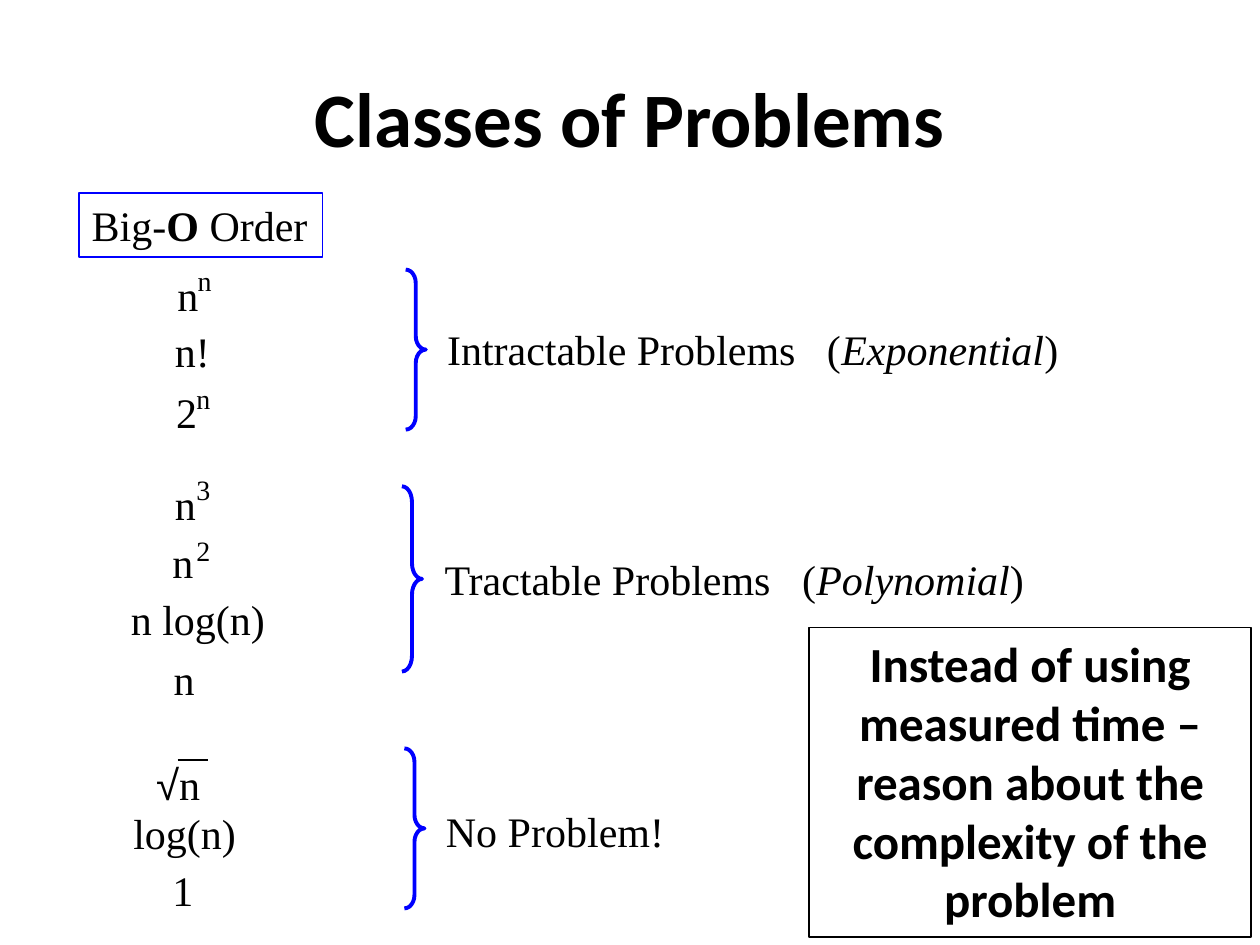
from pptx import Presentation
from pptx.dml.color import RGBColor
from pptx.enum.shapes import MSO_CONNECTOR, MSO_SHAPE
from pptx.enum.text import MSO_ANCHOR, MSO_AUTO_SIZE, PP_ALIGN
from pptx.oxml import parse_xml
from pptx.oxml.ns import nsdecls
from pptx.util import Inches, Pt

RECT, BRACE = MSO_SHAPE.RECTANGLE, MSO_SHAPE.RIGHT_BRACE
STRAIGHT = MSO_CONNECTOR.STRAIGHT
TOP, MID = MSO_ANCHOR.TOP, MSO_ANCHOR.MIDDLE
GROW, FIXED = MSO_AUTO_SIZE.SHAPE_TO_FIT_TEXT, MSO_AUTO_SIZE.NONE
LEFT, CENTER = PP_ALIGN.LEFT, PP_ALIGN.CENTER

COLORS = {"ink": "000000", "blue": "0000FF"}
BODY = {"name": "Times New Roman", "size": Pt(24)}
SMALL = {**BODY, "size": Pt(16)}
TITLE = {"name": "Calibri", "size": Pt(44), "bold": True}
NOTE = {**TITLE, "size": Pt(28)}
LABEL = {"word_wrap": False, "auto_size": GROW, "vertical_anchor": MID}
WRAP = {**LABEL, "word_wrap": True}

ORDERS = [
    ("n!", 1.29, 2.53, 0.48),
    ("n log(n)", 0.94, 4.66, 1.27),
    ("n", 1.28, 5.14, 0.37),
    ("log(n)", 0.96, 6.36, 1.02),
    ("1", 1.27, 6.81, 0.37),
]
POWERS = [
    ("n", 1.31, 2.09, "n", 1.47, 2.04),
    ("2", 1.3, 3.02, "n", 1.46, 2.98),
    ("n", 1.29, 3.75, "3", 1.46, 3.7),
    ("n", 1.27, 4.21, "2", 1.46, 4.18),
]
CLASSES = [
    ("Intractable Problems   (", "Exponential", 3.45, 2.52, 5.05),
    ("Tractable Problems   (", "Polynomial", 3.43, 4.34, 4.81),
    ("No Problem!", "", 3.44, 6.34, 1.95),
]
BRACES = [
    (3.22, 2.14, 1.27, 0.67),
    (3.19, 3.86, 1.47, 0.78),
    (3.21, 5.94, 1.27, 0.67),
]


def color(name):
    """Return the palette colour of this name."""
    return RGBColor.from_string(COLORS[name])


def apply(target, style):
    """Set each value of the style on the target."""
    for key, value in style.items():
        setattr(target, key, value)


def write(shape, runs, font=BODY, frame=LABEL, align=LEFT):
    """Fill a shape with runs, each a text and its own font values."""
    apply(shape.text_frame, frame)
    para = shape.text_frame.paragraphs[0]
    para.alignment = align
    for text, extra in runs:
        run = para.add_run()
        run.text = text
        apply(run.font, {**font, **extra})
        run.font.color.rgb = color("ink")


def add_text(shapes, box, runs, **style):
    """Add a text box with styled runs."""
    write(shapes.add_textbox(*map(Inches, box)), runs, **style)


def add_outline(shapes, kind, box, hue, width):
    """Add an unfilled preset shape with a coloured line."""
    shape = shapes.add_shape(kind, *map(Inches, box))
    shape.shadow.inherit = False
    shape.fill.background()
    shape.line.color.rgb = color(hue)
    shape.line.width = Pt(width)
    return shape


def add_power(shapes, base, left, top, power, right, high):
    """Add a base and its raised exponent as a group."""
    group = shapes.add_group_shape().shapes
    add_text(group, (left, top, 0.37, 0.5), [(base, {})])
    add_text(group, (right, high, 0.31, 0.37), [(power, {})], font=SMALL)


def add_root(shapes):
    """Add the square root of n with its overline as a group."""
    group = shapes.add_group_shape().shapes
    add_text(group, (1.14, 5.97, 0.55, 0.5), [("√", {"name": "Arial"}), ("n", {})])
    bar = group.add_connector(STRAIGHT, *map(Inches, (1.41, 6.03, 1.65, 6.03)))
    bar.line.color.rgb = color("ink")
    bar.line.width = Pt(1)
    bar._element.spPr.append(parse_xml(f"<a:effectLst {nsdecls('a')}/>"))


def add_class(shapes, name, growth, left, top, width):
    """Add the name of a class, with its growth in italics if it has one."""
    runs = [(name, {})]
    if growth:
        runs += [(growth, {"italic": True}), (")", {})]
    add_text(shapes, (left, top, width, 0.5), runs)


def add_brace(shapes, left, top, height, curve):
    """Add a blue right brace."""
    brace = add_outline(shapes, BRACE, (left, top, 0.16, height), "blue", 2.25)
    brace.adjustments[0] = curve
    brace.adjustments[1] = 0.5


def main():
    """Build the slide and save it."""
    deck = Presentation()
    deck.slide_width, deck.slide_height = Inches(10), Inches(7.5)
    shapes = deck.slides.add_slide(deck.slide_layouts[6]).shapes

    add_text(shapes, (-0.02, 0.3, 10.04, 1.25), [("Classes of Problems", {})],
             font=TITLE, frame={**WRAP, "auto_size": FIXED}, align=CENTER)
    note = add_outline(shapes, RECT, (6.42, 4.98, 3.51, 2.46), "ink", 1)
    write(note, [("Instead of using measured time – reason about "
                  "the complexity of the problem", {})],
          font=NOTE, frame={**WRAP, "vertical_anchor": TOP}, align=CENTER)
    head = add_outline(shapes, RECT, (0.63, 1.53, 1.93, 0.51), "blue", 1)
    write(head, [("Big-", {}), ("O ", {"bold": True}), ("Order", {})])

    for text, left, top, width in ORDERS:
        add_text(shapes, (left, top, width, 0.5), [(text, {})])
    for item in POWERS:
        add_power(shapes, *item)
    add_root(shapes)
    for item in CLASSES:
        add_class(shapes, *item)
    for item in BRACES:
        add_brace(shapes, *item)
    deck.save("out.pptx")


if __name__ == "__main__":
    main()
